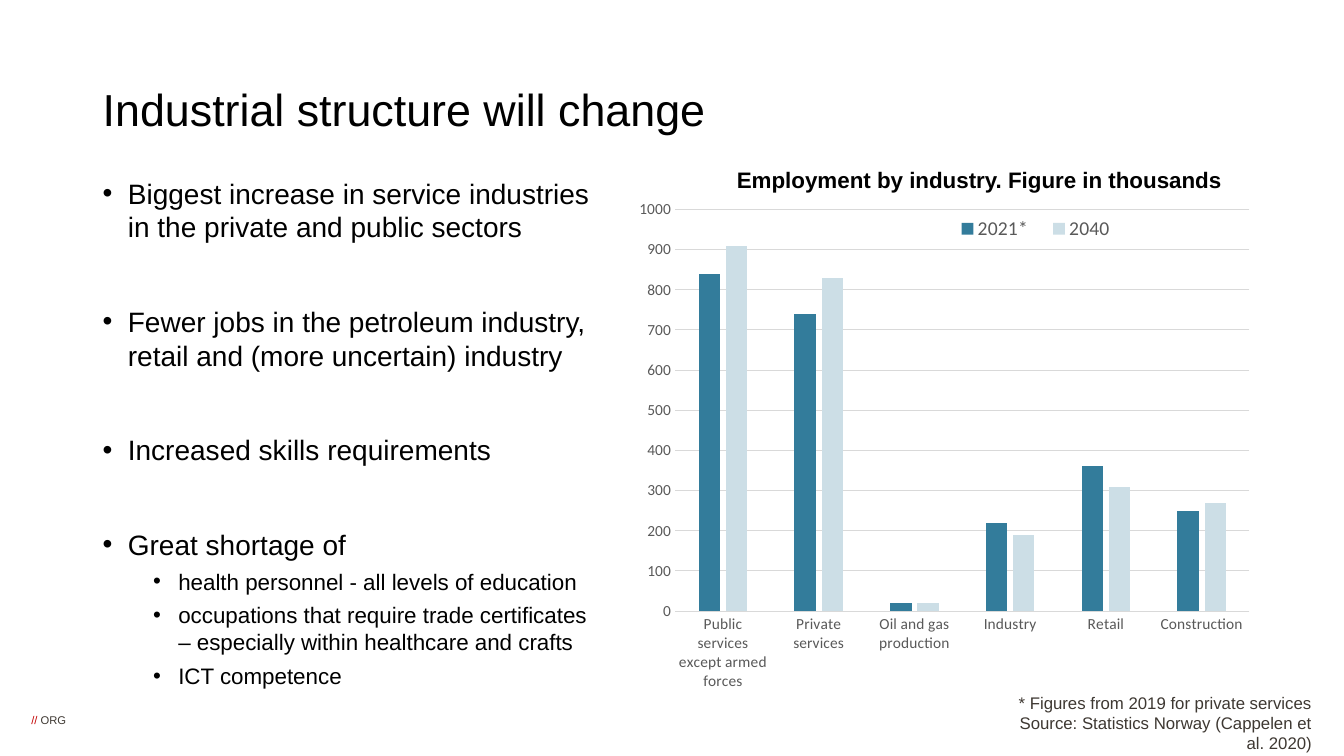
from lxml import etree
from pptx import Presentation
from pptx.chart.data import CategoryChartData
from pptx.dml.color import RGBColor
from pptx.enum.chart import XL_CHART_TYPE, XL_LEGEND_POSITION, XL_TICK_MARK
from pptx.enum.text import MSO_ANCHOR, PP_ALIGN
from pptx.oxml import parse_xml
from pptx.oxml.ns import qn
from pptx.util import Inches, Pt

COLUMNS = XL_CHART_TYPE.COLUMN_CLUSTERED
LEGEND_BOTTOM = XL_LEGEND_POSITION.BOTTOM
NO_TICKS = XL_TICK_MARK.NONE
MIDDLE = MSO_ANCHOR.MIDDLE
LEFT, RIGHT = PP_ALIGN.LEFT, PP_ALIGN.RIGHT

BLACK = RGBColor(0x00, 0x00, 0x00)
RED = RGBColor(0xC3, 0x00, 0x00)
DARK_GREY = RGBColor(0x3E, 0x38, 0x32)
AXIS_GREY = RGBColor(0x59, 0x59, 0x59)
GRID_GREY = RGBColor(0xD9, 0xD9, 0xD9)
TEAL = RGBColor(0x33, 0x7C, 0x9B)
PALE_TEAL = RGBColor(0xCC, 0xDE, 0xE6)

TRENDS = [
    (0, "Biggest increase in service industries in the private and public sectors"),
    (0, "Fewer jobs in the petroleum industry, retail and (more uncertain) industry"),
    (0, "Increased skills requirements"),
    (0, "Great shortage of"),
    (1, "health personnel - all levels of education"),
    (1, "occupations that require trade certificates – especially within healthcare and crafts"),
    (1, "ICT competence"),
]
LEVEL_STYLES = [(20, 0.25, 43.5), (16, 0.75, 5)]

INDUSTRIES = ["Public services except armed forces", "Private services",
              "Oil and gas production", "Industry", "Retail", "Construction"]
EMPLOYMENT = [
    ("2021*", TEAL, (840, 740, 20, 220, 360, 250)),
    ("2040", PALE_TEAL, (910, 830, 20, 190, 310, 270)),
]


def set_font(font, size, color, name="Arial", bold=False):
    """Set size, colour, typeface and weight of a font."""
    font.size, font.name, font.bold = Pt(size), name, bold
    font.color.rgb = color


def add_frame(slide, box):
    """Add a wrapping text box and return its text frame."""
    frame = slide.shapes.add_textbox(*map(Inches, box)).text_frame
    frame.word_wrap = True
    return frame


def add_lines(slide, box, lines, size, color, bold=False, align=LEFT):
    """Add a text box with one uniform paragraph per line."""
    frame = add_frame(slide, box)
    frame.text = "\n".join(lines)
    for paragraph in frame.paragraphs:
        paragraph.alignment = align
        set_font(paragraph.font, size, color, bold=bold)
    return frame


def add_title(slide, box):
    """Add the slide title."""
    frame = add_lines(slide, box, ["Industrial structure will change"], 32, BLACK)
    frame.vertical_anchor = MIDDLE
    frame.paragraphs[0].line_spacing = 0.9


def add_trends(slide, box):
    """Add the two-level bullet list."""
    frame = add_frame(slide, box)
    for index, (level, text) in enumerate(TRENDS):
        paragraph = frame.add_paragraph() if index else frame.paragraphs[0]
        size, margin, space = LEVEL_STYLES[level]
        paragraph.text = text
        paragraph.level = level
        if index:
            paragraph.space_before = Pt(space)
        properties = paragraph._p.get_or_add_pPr()
        properties.set("marL", str(Inches(margin)))
        properties.set("indent", str(Inches(-0.25)))
        etree.SubElement(properties, qn("a:buFont")).set("typeface", "Arial")
        etree.SubElement(properties, qn("a:buChar")).set("char", "•")
        set_font(paragraph.font, size, BLACK)


def add_footer(slide, box):
    """Add the small sender mark at the bottom left."""
    frame = add_frame(slide, box)
    frame.margin_left = frame.margin_right = frame.margin_top = frame.margin_bottom = 0
    frame.word_wrap = False
    paragraph = frame.paragraphs[0]
    paragraph._p.get_or_add_pPr().set("marL", str(Inches(0.04)))
    for text, color in (("// ", RED), ("ORG", DARK_GREY)):
        run = paragraph.add_run()
        run.text = text
        set_font(run.font, 8, color)


def manual_layout(x, y, width, height, inner=False):
    """Return a chart layout element given in fractions of the chart."""
    target = '<c:layoutTarget val="inner"/>' if inner else ""
    return parse_xml(
        '<c:layout xmlns:c="http://schemas.openxmlformats.org/drawingml/2006/chart">'
        f'<c:manualLayout>{target}<c:xMode val="edge"/><c:yMode val="edge"/>'
        f'<c:x val="{x}"/><c:y val="{y}"/><c:w val="{width}"/><c:h val="{height}"/>'
        "</c:manualLayout></c:layout>")


def add_employment_chart(slide, box):
    """Add the column chart of employment by industry."""
    data = CategoryChartData(number_format="0")
    data.categories = INDUSTRIES
    for year, _, values in EMPLOYMENT:
        data.add_series(year, values)
    chart = slide.shapes.add_chart(COLUMNS, *map(Inches, box), data).chart
    chart.has_title = False
    set_font(chart.font, 11, BLACK, "Calibri")

    plot = chart.plots[0]
    plot.vary_by_categories = False
    plot.gap_width, plot.overlap = 219, -27
    for series, (_, color, _) in zip(plot.series, EMPLOYMENT):
        series.format.fill.solid()
        series.format.fill.fore_color.rgb = color

    industry_axis, jobs_axis = chart.category_axis, chart.value_axis
    for axis in (industry_axis, jobs_axis):
        axis.major_tick_mark = axis.minor_tick_mark = NO_TICKS
        set_font(axis.tick_labels.font, 11, AXIS_GREY, "Calibri")
    jobs_axis.minimum_scale, jobs_axis.maximum_scale, jobs_axis.major_unit = 0, 1000, 100
    jobs_axis.has_major_gridlines = True
    jobs_axis.format.line.fill.background()
    for line in (industry_axis.format.line, jobs_axis.major_gridlines.format.line):
        line.color.rgb = GRID_GREY
        line.width = Pt(0.75)

    chart.has_legend = True
    legend = chart.legend
    legend.position = LEGEND_BOTTOM
    legend.include_in_layout = False
    set_font(legend.font, 14, AXIS_GREY, "Calibri")

    plot_area = chart._chartSpace.chart.plotArea
    for layout in plot_area.findall(qn("c:layout")):
        plot_area.remove(layout)
    plot_area.insert(0, manual_layout(0.08, 0.04, 0.9, 0.73, inner=True))
    for layout in legend._element.findall(qn("c:layout")):
        legend._element.remove(layout)
    legend._element.find(qn("c:legendPos")).addnext(manual_layout(0.5, 0.05, 0.29, 0.05))


def build_slide(slide):
    """Place every region of the slide."""
    add_footer(slide, (0.27, 7.08, 0.39, 0.13))
    add_trends(slide, (0.92, 1.7, 5.03, 5.49))
    add_title(slide, (0.92, 0.53, 9.35, 1.17))
    add_lines(slide, (9.91, 6.82, 3.2, 0.5),
              ["* Figures from 2019 for private services",
               "Source: Statistics Norway (Cappelen et al. 2020)"],
              12, DARK_GREY, align=RIGHT)
    add_lines(slide, (7.21, 1.6, 5.22, 0.37),
              ["Employment by industry. Figure in thousands"], 16, BLACK, bold=True)
    add_employment_chart(slide, (6.19, 1.86, 6.33, 5.46))


def main():
    """Create and save the presentation."""
    presentation = Presentation()
    presentation.slide_width, presentation.slide_height = Inches(13.33), Inches(7.5)
    build_slide(presentation.slides.add_slide(presentation.slide_layouts[6]))
    presentation.save("out.pptx")


if __name__ == "__main__":
    main()
